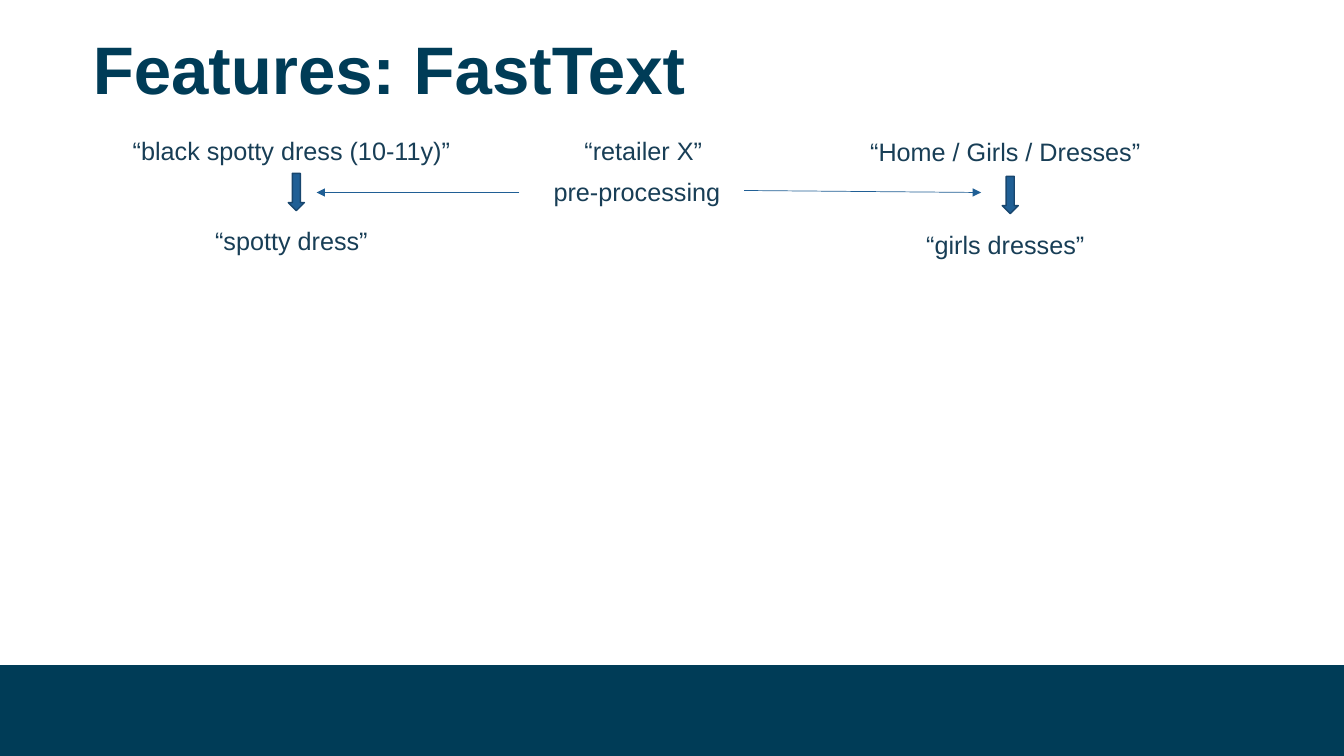
import pptx
import pptx.util
import pptx.dml.color
import pptx.enum.shapes
import pptx.enum.text
import pptx.oxml.ns
from dataclasses import dataclass
from lxml import etree
from pptx.util import Inches, Pt

TITLE = "Features: FastText"
TITLE_AREA = (0.92, 0.31, 11.5, 0.83)
LABEL_HEIGHT = 0.4
LABELS = [
    ("“black spotty dress (10-11y)”", 2.94, 1.29, 3.7, "CENTER"),
    ("“retailer X”", 6.43, 1.29, 3.7, "CENTER"),
    ("“Home / Girls / Dresses”", 10.02, 1.3, 2.87, "CENTER"),
    ("pre-processing", 6.65, 1.7, 2.32, "LEFT"),
    ("“spotty dress”", 2.94, 2.18, 1.83, "CENTER"),
    ("“girls dresses”", 10.02, 2.22, 1.83, "CENTER"),
]
BLOCK_ARROW_SIZE = (0.16, 0.37)
BLOCK_ARROWS = [(2.94, 1.72), (10.02, 1.75)]
THIN_ARROWS = [((5.15, 1.91), (3.14, 1.91)), ((7.38, 1.89), (9.73, 1.91))]
BAND_SHARE = 0.12


@dataclass(frozen=True)
class Theme:
    font: str = "Arial"
    navy: str = "003C57"
    label: str = "183E56"
    arrow: str = "205F95"
    arrow_edge: str = "18466E"
    title_size: int = 48
    label_size: int = 18


THEME = Theme()


def color(value):
    return pptx.dml.color.RGBColor.from_string(value)


def write(box, text, size, tint, align, anchor, bold=False):
    frame = box.text_frame
    frame.word_wrap = True
    frame.auto_size = pptx.enum.text.MSO_AUTO_SIZE.NONE
    frame.vertical_anchor = anchor
    frame.margin_left = 0
    frame.margin_right = Inches(0.1)
    frame.margin_top = frame.margin_bottom = Inches(0.05)
    para = frame.paragraphs[0]
    para.alignment = align
    span = para.add_run()
    span.text = text
    span.font.name = THEME.font
    span.font.size = Pt(size)
    span.font.bold = bold
    span.font.color.rgb = color(tint)
    return para


def add_filled(page, kind, area, fill, edge=None):
    shape = page.shapes.add_shape(kind, *map(Inches, area))
    shape.shadow.inherit = False
    shape.fill.solid()
    shape.fill.fore_color.rgb = color(fill)
    if edge:
        shape.line.color.rgb = color(edge)
        shape.line.width = Pt(1)
    else:
        shape.line.fill.background()


def add_thin_arrow(page, start, end):
    arrow = page.shapes.add_connector(
        pptx.enum.shapes.MSO_CONNECTOR.STRAIGHT, *map(Inches, start + end))
    arrow.line.color.rgb = color(THEME.arrow)
    arrow.line.width = Pt(0.5)
    properties = arrow.line._get_or_add_ln()
    etree.SubElement(properties, pptx.oxml.ns.qn("a:tailEnd"), type="triangle")
    etree.SubElement(arrow._element.spPr, pptx.oxml.ns.qn("a:effectLst"))


def main():
    deck = pptx.Presentation()
    width, height = 13.33, 7.5
    deck.slide_width, deck.slide_height = Inches(width), Inches(height)
    page = deck.slides.add_slide(deck.slide_layouts[5])
    shapes = pptx.enum.shapes.MSO_SHAPE
    aligns = pptx.enum.text.PP_ALIGN
    anchors = pptx.enum.text.MSO_ANCHOR

    band = height * BAND_SHARE
    add_filled(page, shapes.RECTANGLE, (0, height - band, width, band), THEME.navy)

    title = page.shapes.title
    title.left, title.top, title.width, title.height = map(Inches, TITLE_AREA)
    heading = write(title, TITLE, THEME.title_size, THEME.navy,
                    aligns.LEFT, anchors.MIDDLE, bold=True)
    heading.line_spacing = 0.9

    for text, center, top, span, align in LABELS:
        area = (center - span / 2, top, span, LABEL_HEIGHT)
        box = page.shapes.add_textbox(*map(Inches, area))
        write(box, text, THEME.label_size, THEME.label, aligns[align], anchors.BOTTOM)

    for center, top in BLOCK_ARROWS:
        area = (center - BLOCK_ARROW_SIZE[0] / 2, top, *BLOCK_ARROW_SIZE)
        add_filled(page, shapes.DOWN_ARROW, area, THEME.arrow, THEME.arrow_edge)

    for start, end in THIN_ARROWS:
        add_thin_arrow(page, start, end)

    deck.save("out.pptx")


if __name__ == "__main__":
    main()
